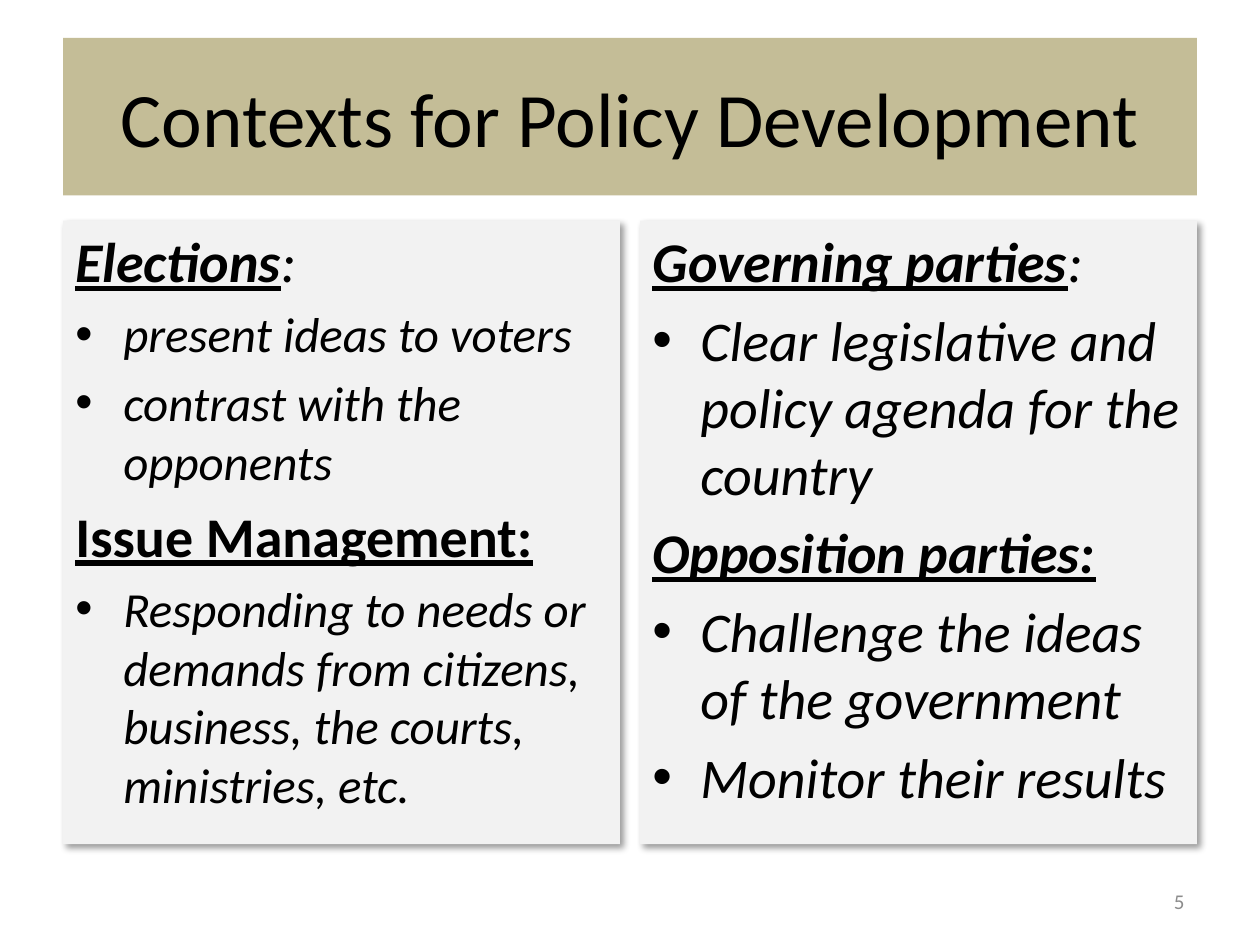
from lxml import etree
from pptx import Presentation
from pptx.dml.color import RGBColor
from pptx.enum.shapes import MSO_SHAPE
from pptx.enum.text import MSO_ANCHOR, PP_ALIGN
from pptx.oxml import parse_xml
from pptx.oxml.ns import nsdecls, qn
from pptx.util import Inches, Pt

BLACK = RGBColor(0x00, 0x00, 0x00)
GREY = RGBColor(0x8C, 0x8C, 0x8C)
TAN = RGBColor(0xC4, 0xBD, 0x97)
PANEL = RGBColor(0xF2, 0xF2, 0xF2)

SHADOW = (
    f'<a:effectLst {nsdecls("a")}>'
    '<a:outerShdw blurRad="50800" dist="38100" dir="2700000" algn="tl" rotWithShape="0">'
    '<a:srgbClr val="000000"><a:alpha val="40000"/></a:srgbClr>'
    '</a:outerShdw></a:effectLst>'
)
INDENT = Inches(0.38)


def add_run(p, text, size, color=BLACK, bold=False, italic=False, underline=False):
    r = p.add_run()
    r.text = text
    r.font.name = "Calibri"
    r.font.size = Pt(size)
    r.font.color.rgb = color
    r.font.bold = bold
    r.font.italic = italic
    r.font.underline = underline


def add_bullet(p):
    pPr = p._p.get_or_add_pPr()
    pPr.set("marL", str(INDENT))
    pPr.set("indent", str(-INDENT))
    etree.SubElement(pPr, qn("a:buFont")).set("typeface", "Arial")
    etree.SubElement(pPr, qn("a:buChar")).set("char", "•")


prs = Presentation()
prs.slide_width, prs.slide_height = Inches(10), Inches(7.5)
s = prs.slides.add_slide(prs.slide_layouts[5])

title = s.shapes.title
title.left, title.top = Inches(0.5), Inches(0.3)
title.width, title.height = Inches(9), Inches(1.25)
title.fill.solid()
title.fill.fore_color.rgb = TAN
title.text_frame.vertical_anchor = MSO_ANCHOR.MIDDLE
p = title.text_frame.paragraphs[0]
p.alignment = PP_ALIGN.CENTER
add_run(p, "Contexts for Policy Development", 44)

# Each panel: left edge, bullet size, then (heading, plain tail, italic heading, bullets)
panels = [
    (0.5, 28, [
        ("Elections", ":", True,
         ["present ideas to voters", "contrast with the opponents"]),
        ("Issue Management:", "", False,
         ["Responding to needs or demands from citizens, business, "
          "the courts, ministries, etc."]),
    ]),
    (5.08, 32, [
        ("Governing parties", ":", True,
         ["Clear legislative and policy agenda for the country"]),
        ("Opposition parties:", "", True,
         ["Challenge the ideas of the government", "Monitor their results"]),
    ]),
]

for left, bullet_size, sections in panels:
    sp = s.shapes.add_shape(MSO_SHAPE.RECTANGLE, Inches(left), Inches(1.75),
                            Inches(4.42), Inches(4.95))
    sp.fill.solid()
    sp.fill.fore_color.rgb = PANEL
    sp.line.fill.background()
    sp._element.spPr.append(parse_xml(SHADOW))
    tf = sp.text_frame
    tf.word_wrap = True
    tf.vertical_anchor = MSO_ANCHOR.TOP
    p = tf.paragraphs[0]
    for i, (heading, tail, italic, bullets) in enumerate(sections):
        if i:
            p = tf.add_paragraph()
        p.alignment = PP_ALIGN.LEFT
        p.space_before = Pt(32 * 0.2)
        add_run(p, heading, 32, bold=True, italic=italic, underline=True)
        if tail:
            add_run(p, tail, 32, italic=True)
        for text in bullets:
            p = tf.add_paragraph()
            p.alignment = PP_ALIGN.LEFT
            p.space_before = Pt(bullet_size * 0.2)
            add_bullet(p)
            add_run(p, text, bullet_size, italic=True)

number = s.shapes.add_textbox(Inches(7.17), Inches(6.95), Inches(2.33), Inches(0.4))
tf = number.text_frame
tf.word_wrap = True
tf.vertical_anchor = MSO_ANCHOR.MIDDLE
p = tf.paragraphs[0]
p.alignment = PP_ALIGN.RIGHT
add_run(p, "5", 12, GREY)

prs.save("out.pptx")
